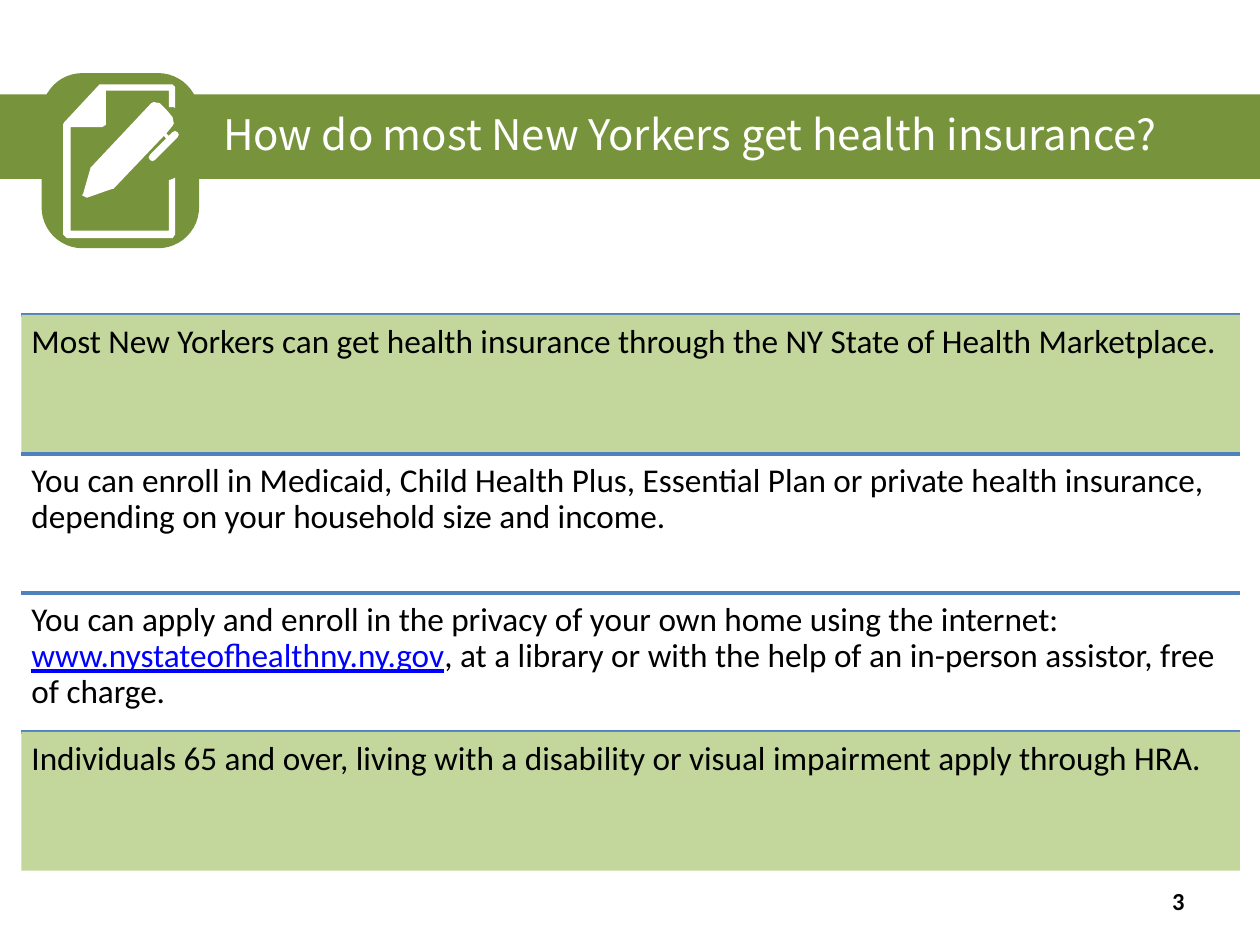
"""Build the slide on how most New Yorkers get health insurance."""
import pptx
import pptx.dml.color
import pptx.enum.shapes
import pptx.enum.text
import pptx.oxml
import pptx.oxml.ns
import pptx.util
from pptx.util import Inches

MSO = pptx.enum.shapes.MSO_SHAPE
ALIGN = pptx.enum.text.PP_ALIGN
ANCHOR = pptx.enum.text.MSO_ANCHOR


def rgb(value):
    return pptx.dml.color.RGBColor.from_string(value)


def paint(sp, color):
    sp.shadow.inherit = False
    sp.line.fill.background()
    sp.fill.solid()
    sp.fill.fore_color.rgb = rgb(color)


prs = pptx.Presentation()
prs.slide_width, prs.slide_height = Inches(10), Inches(7.5)
s = prs.slides.add_slide(prs.slide_layouts[5])

band = s.shapes.add_shape(MSO.RECTANGLE, Inches(-0.08), Inches(0.75), Inches(11), Inches(0.67))
paint(band, "77933C")
plate = s.shapes.add_shape(MSO.ROUNDED_RECTANGLE, Inches(0.33), Inches(0.58), Inches(1.25), Inches(1.39))
plate.adjustments[0] = 0.26
paint(plate, "77933C")

page = [(134, 183), (56, 183), (56, 101), (81, 101), (84, 99), (84, 72), (134, 72),
        (134, 85), (138, 85), (139, 86), (139, 69), (137, 67), (81, 67), (79, 67),
        (51, 97), (50, 99), (50, 186), (53, 189), (137, 189), (139, 186), (139, 141),
        (137, 142), (134, 143)]
pencil = [(137, 105), (134, 108), (132, 106), (137, 100), (138, 98), (137, 93), (132, 87),
          (127, 82), (122, 81), (120, 82), (73, 132), (72, 133), (66, 154), (65, 155),
          (67, 156), (69, 157), (89, 150), (90, 150), (130, 108), (132, 110), (119, 123),
          (118, 125), (119, 127), (121, 128), (123, 127), (141, 109), (142, 107), (141, 105),
          (139, 104)]
for points in (page, pencil):
    fb = s.shapes.build_freeform(*points[0], scale=Inches(0.01))
    fb.add_line_segments(points[1:], close=True)
    paint(fb.convert_to_shape(), "FFFFFF")

title = s.shapes.title
title.left, title.top, title.width, title.height = Inches(1.67), Inches(0.81), Inches(9.17), Inches(0.91)
title.element.getparent().append(title.element)
tf = title.text_frame
tf.text = "How do most New Yorkers get health insurance?"
tf.vertical_anchor = ANCHOR.TOP
p = tf.paragraphs[0]
p.alignment = ALIGN.LEFT
p.font.name, p.font.size = "Noto Sans CJK JP", pptx.util.Pt(24)
p.font.color.rgb = rgb("FFFFFF")

link = "www.nystateofhealthny.ny.gov"
rows = [
    (["Most New Yorkers can get health insurance through the NY State of Health Marketplace."], True),
    (["You can enroll in Medicaid, Child Health Plus, Essential Plan or private health insurance, "
      "depending on your household size and income."], False),
    (["You can apply and enroll in the privacy of your own home using the internet: ", link,
      ", at a library or with the help of an in-person assistor, free of charge."], False),
    (["Individuals 65 and over, living with a disability or visual impairment apply through HRA."], True),
]
left, width, height = Inches(0.17), Inches(9.67), Inches(1.1)
for i, (texts, shaded) in enumerate(rows):
    top = Inches(2.5 + 1.1033 * i)
    rule = s.shapes.add_connector(pptx.enum.shapes.MSO_CONNECTOR.STRAIGHT, left, top, left + width, top)
    rule.line.color.rgb = rgb("4F81BD")
    rule.line.width = pptx.util.Pt(2)
    rule.element.spPr.append(pptx.oxml.parse_xml("<a:effectLst %s/>" % pptx.oxml.ns.nsdecls("a")))

    sp = s.shapes.add_shape(MSO.RECTANGLE, left, top, width, height)
    paint(sp, "C3D69B")
    if not shaded:
        sp.fill.background()
    tf = sp.text_frame
    tf.word_wrap = True
    tf.vertical_anchor = ANCHOR.TOP
    tf.margin_left = tf.margin_right = tf.margin_top = tf.margin_bottom = Inches(0.08)
    p = tf.paragraphs[0]
    p.alignment = ALIGN.LEFT
    p.line_spacing = 0.9
    p.font.name, p.font.size = "Calibri", pptx.util.Pt(19)
    for text in texts:
        r = p.add_run()
        r.text = text
        r.font.color.rgb = rgb("0000FF" if text == link else "000000")
        if text == link:
            r.font.underline = True

number = s.shapes.add_textbox(Inches(7.17), Inches(6.95), Inches(2.33), Inches(0.4))
tf = number.text_frame
tf.word_wrap = True
tf.vertical_anchor = ANCHOR.MIDDLE
tf.text = "3"
p = tf.paragraphs[0]
p.alignment = ALIGN.RIGHT
p.font.name, p.font.size, p.font.bold = "Calibri", pptx.util.Pt(14), True
p.font.color.rgb = rgb("000000")

prs.save("out.pptx")
